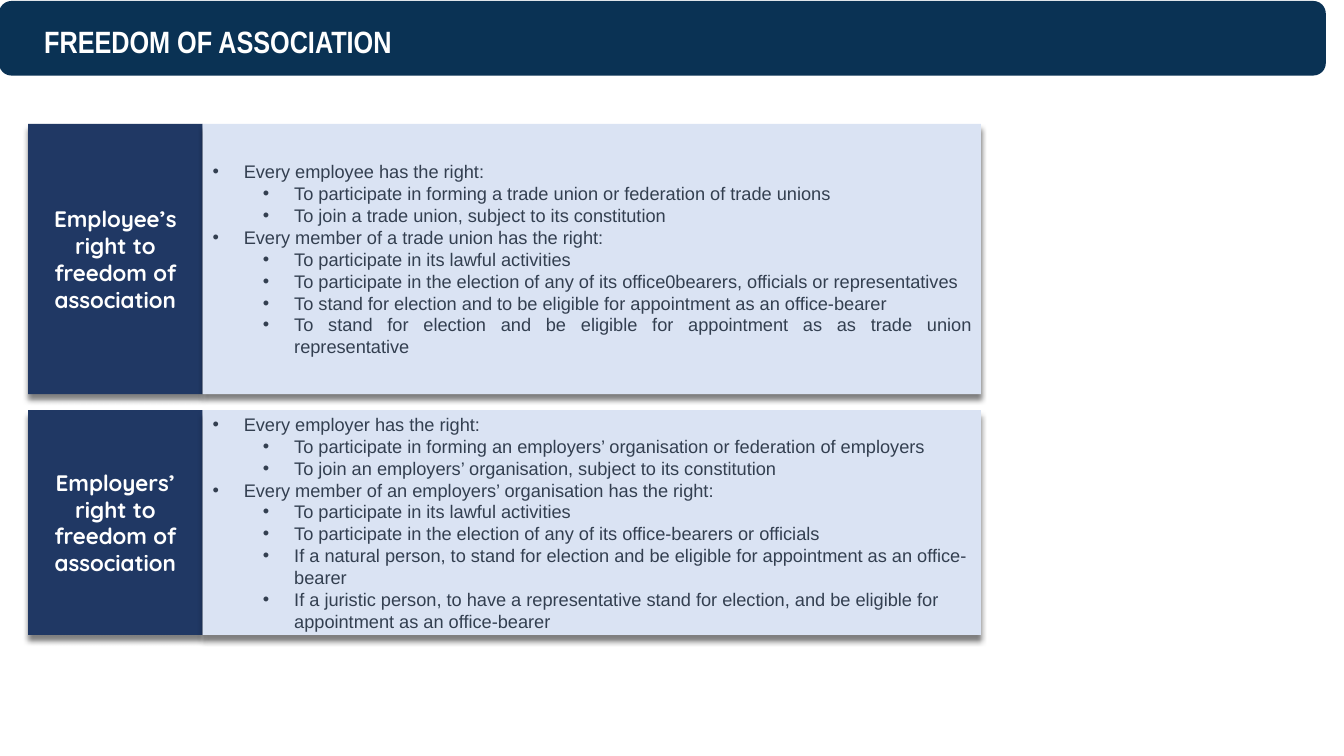
from lxml import etree
from pptx import Presentation
from pptx import util as u
from pptx.dml.color import RGBColor
from pptx.enum import shapes, text
from pptx.oxml import ns

NAVY, INDIGO, PALE, SLATE, WHITE = "0A3254", "203864", "DAE3F3", "333F50", "FFFFFF"
LABEL_WIDTH = 1.73
HANGING = 0.31
ALIGN = text.PP_ALIGN

EMPLOYEE_RIGHTS = [
    (0, "Every employee has the right:"),
    (1, "To participate in forming a trade union or federation of trade unions"),
    (1, "To join a trade union, subject to its constitution"),
    (0, "Every member of a trade union has the right:"),
    (1, "To participate in its lawful activities"),
    (1, "To participate in the election of any of its office0bearers, officials or representatives"),
    (1, "To stand for election and to be eligible for appointment as an office-bearer"),
    (1, "To stand for election and be eligible for appointment as as trade union representative"),
]
EMPLOYER_RIGHTS = [
    (0, "Every employer has the right:"),
    (1, "To participate in forming an employers’ organisation or federation of employers"),
    (1, "To join an employers’ organisation, subject to its constitution"),
    (0, "Every member of an employers’ organisation has the right:"),
    (1, "To participate in its lawful activities"),
    (1, "To participate in the election of any of its office-bearers or officials"),
    (1, "If a natural person, to stand for election and be eligible for appointment as an office-bearer"),
    (1, "If a juristic person, to have a representative stand for election, "
        "and be eligible for appointment as an office-bearer"),
]


def color(value):
    return RGBColor.from_string(value)


def add_block(page, box, fill, kind=shapes.MSO_SHAPE.RECTANGLE):
    block = page.shapes.add_shape(kind, *map(u.Inches, box))
    block.shadow.inherit = False
    block.fill.solid()
    block.fill.fore_color.rgb = color(fill)
    block.line.fill.background()
    return block


def add_drop_shadow(block):
    effects = block._element.spPr.find(ns.qn("a:effectLst"))
    shadow = etree.SubElement(effects, ns.qn("a:outerShdw"), blurRad=str(u.Pt(4)),
                              dist=str(u.Pt(4)), dir="5400000", algn="t", rotWithShape="0")
    black = etree.SubElement(shadow, ns.qn("a:srgbClr"), val="000000")
    etree.SubElement(black, ns.qn("a:alpha"), val="49000")


def prepare_frame(shape):
    frame = shape.text_frame
    frame.word_wrap = True
    frame.vertical_anchor = text.MSO_ANCHOR.MIDDLE
    return frame


def write(para, words, align, font_color, **font):
    para.alignment = align
    span = para.add_run()
    span.text = words
    span.font.color.rgb = color(font_color)
    for name, value in font.items():
        setattr(span.font, name, value)


def add_bullet(para, level):
    """Indent the paragraph for its level and hang a round bullet."""
    para.level = level
    properties = para._p.get_or_add_pPr()
    properties.set("marL", str(u.Inches(HANGING + 0.5 * level)))
    properties.set("indent", str(-u.Inches(HANGING)))
    etree.SubElement(properties, ns.qn("a:buFont"), typeface="Arial")
    etree.SubElement(properties, ns.qn("a:buChar"), char="•")


def add_title_bar(page, box, title):
    left, top, width, height = box
    add_block(page, box, NAVY, shapes.MSO_SHAPE.ROUNDED_RECTANGLE)
    title_box = (left + 0.35, top + 0.2, width - 0.7, height - 0.3)
    frame = prepare_frame(page.shapes.add_textbox(*map(u.Inches, title_box)))
    para = frame.paragraphs[0]
    para.line_spacing = 0.9
    write(para, title, ALIGN.LEFT, WHITE, name="Arial Narrow", size=u.Pt(22), bold=True)


def add_rights_panel(page, box, label, rights, align):
    """Dark label on the left, bulleted rights on the right."""
    left, top, width, height = box
    label_block = add_block(page, (left, top, LABEL_WIDTH, height), INDIGO)
    rights_box = (left + LABEL_WIDTH, top, width - LABEL_WIDTH, height)
    rights_block = add_block(page, rights_box, PALE)
    for block in (label_block, rights_block):
        add_drop_shadow(block)

    write(prepare_frame(label_block).paragraphs[0], label, ALIGN.CENTER, WHITE,
          name="Quicksand", size=u.Pt(16), bold=True)

    frame = prepare_frame(rights_block)
    for index, (level, words) in enumerate(rights):
        para = frame.add_paragraph() if index else frame.paragraphs[0]
        add_bullet(para, level)
        write(para, words, align, SLATE, name="Arial", size=u.Pt(13))


def main():
    deck = Presentation()
    deck.slide_width, deck.slide_height = u.Inches(13.33), u.Inches(7.5)
    page = deck.slides.add_slide(deck.slide_layouts[6])
    add_title_bar(page, (-0.01, 0.01, 13.16, 0.74), "FREEDOM OF ASSOCIATION")
    add_rights_panel(page, (0.28, 4.07, 9.45, 2.23),
                     "Employers’ right to freedom of association", EMPLOYER_RIGHTS, ALIGN.LEFT)
    add_rights_panel(page, (0.28, 1.23, 9.45, 2.68),
                     "Employee’s right to freedom of association", EMPLOYEE_RIGHTS, ALIGN.JUSTIFY)
    deck.save("out.pptx")


if __name__ == "__main__":
    main()
